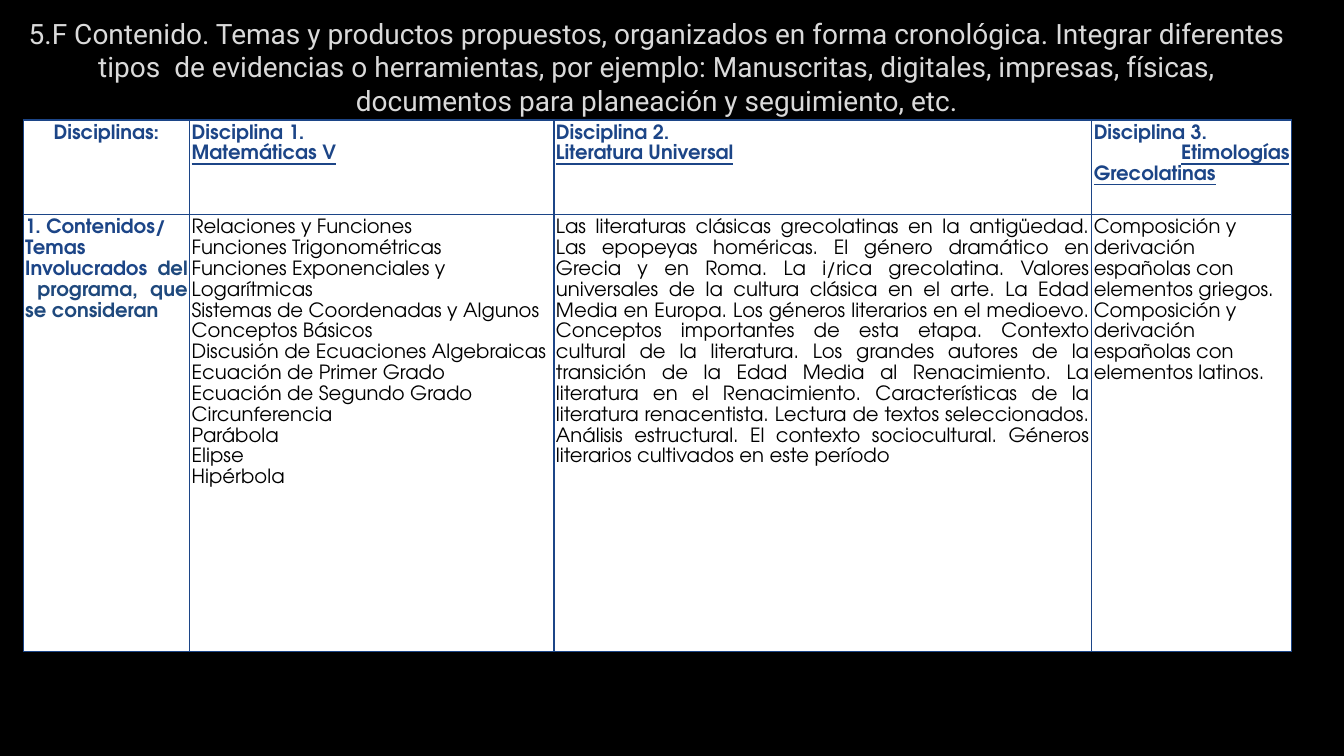
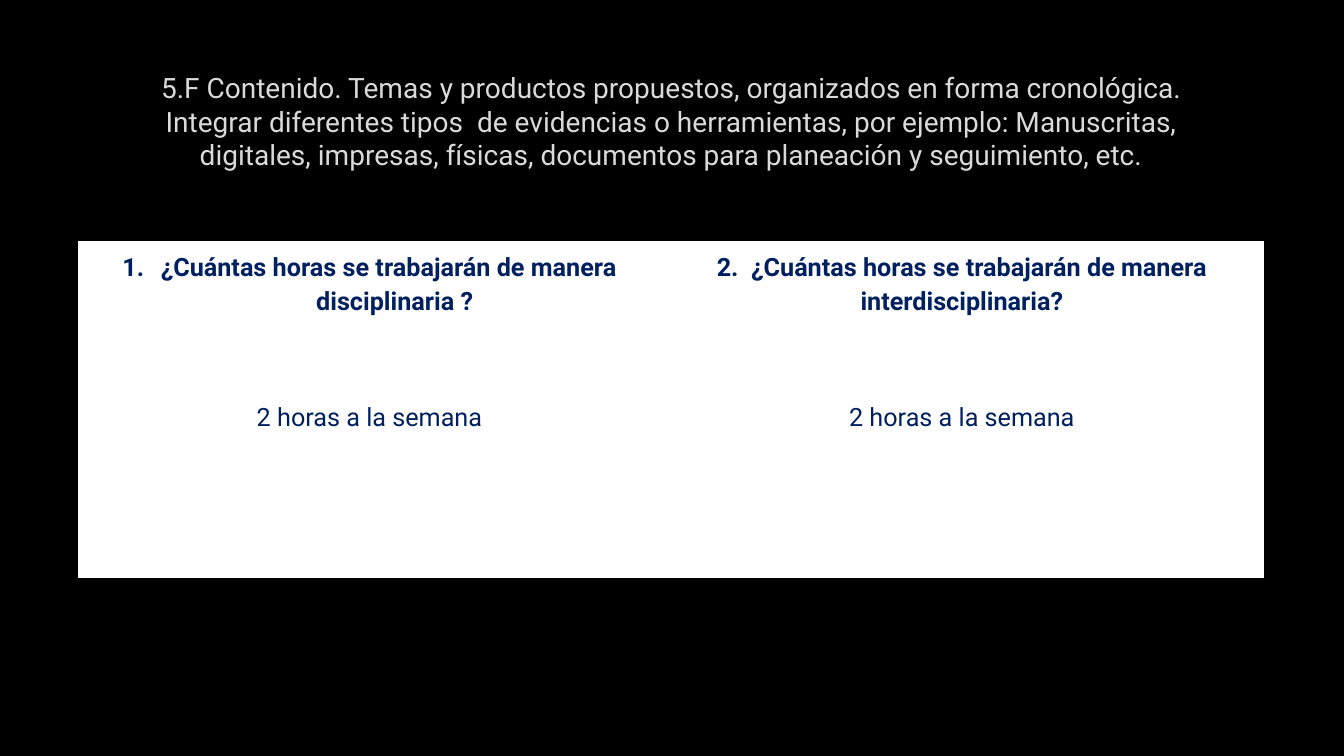
from dataclasses import dataclass
from lxml.etree import SubElement
from pptx import Presentation
from pptx.dml.color import RGBColor
from pptx.enum.text import MSO_ANCHOR as Anchor, PP_ALIGN as Align
from pptx.oxml.ns import qn
from pptx.util import Inches, Pt

WIDTH, HEIGHT = Inches(13.33), Inches(7.5)
BLACK, WHITE, SILVER = "000000", "FFFFFF", "DADADA"
BLUE, STEEL, NAVY = "1C4587", "1F497D", "002060"

TITLE = ("5.F Contenido. Temas y productos propuestos, organizados en forma cronológica. "
         "Integrar diferentes tipos  de evidencias o herramientas, por ejemplo: Manuscritas, "
         "digitales, impresas, físicas, documentos para planeación y seguimiento, etc.")
TITLE_FONT = {"name": "Roboto", "size": Pt(20), "color": SILVER}
BODY_FONT = {"name": "TeX Gyre Adventor", "size": Pt(14), "color": BLACK}
HEAD_FONT = BODY_FONT | {"color": BLUE, "bold": True}
LINK_FONT = HEAD_FONT | {"underline": True}
ANSWER_FONT = {"name": "Roboto", "size": Pt(18), "color": NAVY}
QUESTION_FONT = ANSWER_FONT | {"bold": True}

TOPICS = ["Relaciones y Funciones", "Funciones Trigonométricas",
          "Funciones Exponenciales y Logarítmicas",
          "Sistemas de Coordenadas y Algunos Conceptos Básicos",
          "Discusión de Ecuaciones Algebraicas", "Ecuación de Primer Grado",
          "Ecuación de Segundo Grado", "Circunferencia", "Parábola", "Elipse", "Hipérbola"]
LITERATURE = (
    "Las literaturas clásicas grecolatinas en la antigüedad. Las epopeyas homéricas. "
    "El género dramático en Grecia y en Roma. La i/rica grecolatina. Valores universales "
    "de la cultura clásica en el arte. La Edad Media en Europa. Los géneros literarios en "
    "el medioevo. Conceptos importantes de esta etapa. Contexto cultural de la literatura. "
    "Los grandes autores de la transición de la Edad Media al Renacimiento. La literatura "
    "en el Renacimiento. Características de la literatura renacentista. Lectura de textos "
    "seleccionados. Análisis estructural. El contexto sociocultural. Géneros literarios "
    "cultivados en este período")
ORIGINS = [f"Composición y derivación españolas con elementos {language}."
           for language in ("griegos", "latinos")]


@dataclass
class Line:
    spans: list
    align: Align = Align.LEFT
    indent: float = 0
    numbered: bool = False


def rgb(value):
    return RGBColor.from_string(value)


def share(left, top, width, height):
    return [int(part * whole / 100) for part, whole in
            zip((left, top, width, height), (WIDTH, HEIGHT) * 2)]


def lines(texts, font, align=Align.LEFT):
    return [Line([(text, font)], align) for text in texts]


def write(frame, content, spacing):
    for index, line in enumerate(content):
        para = frame.add_paragraph() if index else frame.paragraphs[0]
        para.alignment, para.line_spacing = line.align, spacing
        if line.indent:
            props = para._p.get_or_add_pPr()
            props.set("marL", str(Inches(line.indent)))
            props.set("indent", str(-Inches(line.indent) if line.numbered else 0))
            if line.numbered:
                SubElement(props, qn("a:buFont"), typeface="+mj-lt")
                SubElement(props, qn("a:buAutoNum"), type="arabicPeriod")
        for text, font in line.spans:
            span = para.add_run()
            span.text = text
            for name, value in font.items():
                if name == "color":
                    span.font.color.rgb = rgb(value)
                else:
                    setattr(span.font, name, value)


def add_page(deck, title_box):
    page = deck.slides.add_slide(deck.slide_layouts[6])
    page.background.fill.solid()
    page.background.fill.fore_color.rgb = rgb(BLACK)
    frame = page.shapes.add_textbox(*share(*title_box)).text_frame
    frame.word_wrap, frame.vertical_anchor = True, Anchor.MIDDLE
    write(frame, lines([TITLE], TITLE_FONT, Align.CENTER), 1)
    return page


def style_cell(cell, border, inset):
    for side in ("left", "right", "top", "bottom"):
        setattr(cell, f"margin_{side}", Inches(inset))
        edge = SubElement(cell._tc.get_or_add_tcPr(), qn(f"a:ln{side[0].upper()}"),
                          w=str(Pt(1)))
        fill = SubElement(edge, qn("a:solidFill"))
        SubElement(fill, qn("a:srgbClr"), val=border)
    cell.fill.solid()
    cell.fill.fore_color.rgb = rgb(WHITE)


def add_grid(page, box, columns, rows, content, border, inset):
    left, top, width, height = share(*box)
    table = page.shapes.add_table(len(rows), len(columns), left, top, width, height).table
    table.first_row = table.horz_banding = False
    for column, part in zip(table.columns, columns):
        column.width = int(width * part / sum(columns))
    for row, part in zip(table.rows, rows):
        row.height = int(height * part / sum(rows))
    for cell, cell_lines in zip(table.iter_cells(), content):
        style_cell(cell, border, inset)
        write(cell.text_frame, cell_lines, 1.15)
    return table


def build_contents(deck):
    page = add_page(deck, (0.9, 1.73, 95.95, 14.13))
    heads = [lines([f"Disciplina {number}."], HEAD_FONT) for number in (1, 2, 3)]
    heads[0] += lines(["Matemáticas V"], LINK_FONT)
    heads[1] += lines(["Literatura Universal"], LINK_FONT)
    heads[2].append(Line([(" ", HEAD_FONT), ("Etimologías Grecolatinas", LINK_FONT)],
                         Align.JUSTIFY))
    label = lines(["1. Contenidos/"], HEAD_FONT, Align.JUSTIFY)
    label.append(Line([("Temas Involucrados ", HEAD_FONT),
                       ("del  programa, que se consideran", HEAD_FONT | {"color": STEEL})],
                      Align.JUSTIFY))
    content = [lines(["Disciplinas:"], HEAD_FONT, Align.CENTER), *heads,
               label, lines(TOPICS, BODY_FONT),
               lines([LITERATURE], BODY_FONT, Align.JUSTIFY), lines(ORIGINS, BODY_FONT)]
    add_grid(page, (1.73, 15.87, 94.37, 70.27), (1.65, 3.61, 5.33, 1.98), (0.94, 4.34),
             content, BLUE, 0.02)


def build_hours(deck):
    page = add_page(deck, (7.5, 8.93, 84.92, 14.13))
    first = [Line([("¿Cuántas horas se trabajarán de manera", QUESTION_FONT)],
                  Align.CENTER, 0.38, True),
             Line([("disciplinaria ?", QUESTION_FONT)], Align.CENTER, 0.5)]
    second = lines(["2.  ¿Cuántas horas se trabajarán de manera interdisciplinaria?"],
                   QUESTION_FONT, Align.CENTER)
    answer = lines(["2 horas a la semana"], ANSWER_FONT, Align.CENTER)
    table = add_grid(page, (5.85, 32, 88.15, 44.4), (5.77, 5.98), (1.15, 2.18),
                     [first, second, answer, answer], WHITE, 0.07)
    for cell in table.rows[1].cells:
        cell.margin_top = Inches(0.41)


def main():
    deck = Presentation()
    deck.slide_width, deck.slide_height = WIDTH, HEIGHT
    build_contents(deck)
    build_hours(deck)
    deck.save("out.pptx")


if __name__ == "__main__":
    main()
